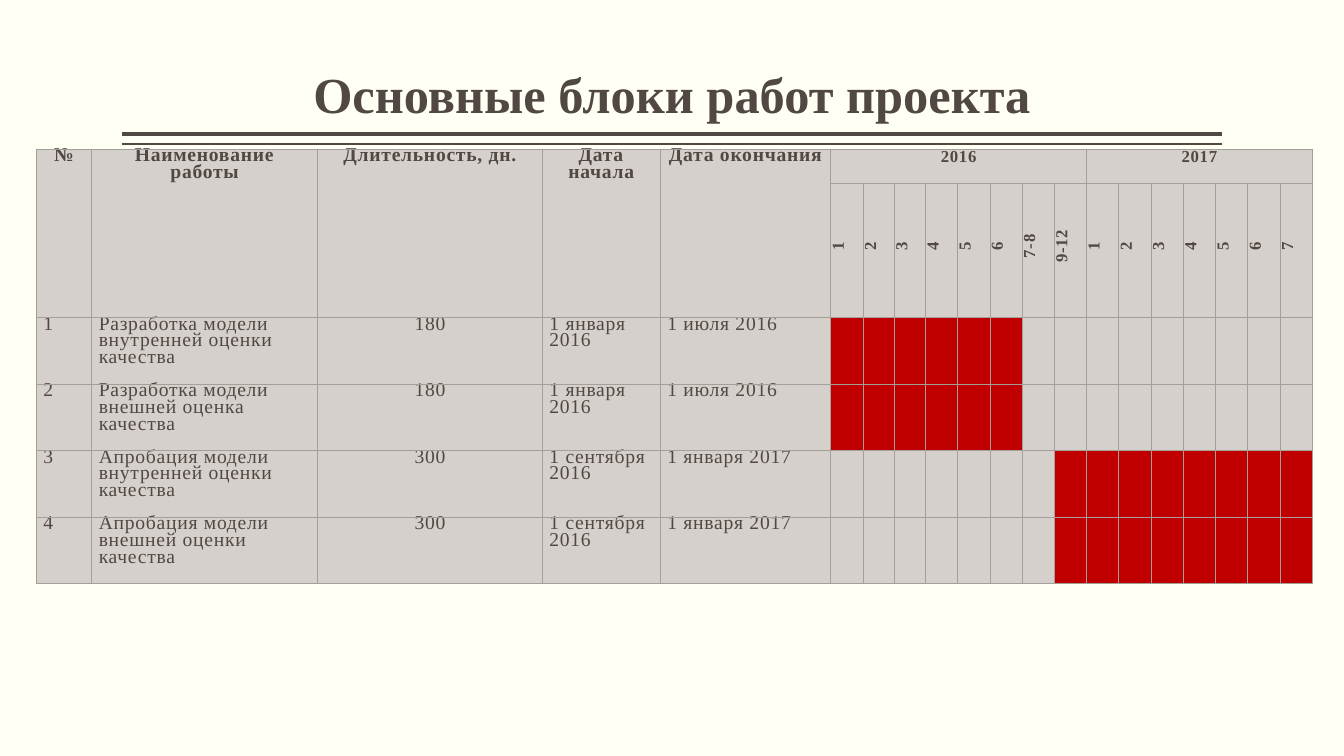
from lxml.etree import SubElement
from pptx import Presentation
from pptx.dml.color import RGBColor
from pptx.enum.shapes import MSO_CONNECTOR
from pptx.enum.text import MSO_ANCHOR, PP_ALIGN
from pptx.oxml import parse_xml
from pptx.oxml.ns import nsdecls, qn
from pptx.util import Inches, Pt

FONT = "Times New Roman"
INK, PAPER, CELL, BORDER, BAR = "514843", "FFFFF3", "D5D0CB", "A59F9A", "C00000"
FIRST_MONTH = 5
COLUMNS = [0.55, 2.24, 2.23, 1.17, 1.69, 0.32, 0.31, 0.31] + [0.32] * 12
ROWS = [0.34, 1.33] + [0.66] * 4
HEADINGS = ["№", "Наименование работы", "Длительность, дн.", "Дата начала", "Дата окончания"]
YEARS = [
    ("2016", ["1", "2", "3", "4", "5", "6", "7-8", "9-12"]),
    ("2017", ["1", "2", "3", "4", "5", "6", "7"]),
]
TASKS = [
    ("Разработка модели внутренней оценки качества", "180", "1 января 2016", "1 июля 2016", range(0, 6)),
    ("Разработка модели внешней оценка качества", "180", "1 января 2016", "1 июля 2016", range(0, 6)),
    ("Апробация модели внутренней оценки качества", "300", "1 сентября 2016", "1 января 2017", range(7, 15)),
    ("Апробация модели внешней оценки качества", "300", "1 сентября 2016", "1 января 2017", range(7, 15)),
]


def color(value):
    return RGBColor.from_string(value)


def add_run(p, text, size, bold):
    r = p.add_run()
    r.text = text
    r.font.name = FONT
    r.font.size = Pt(size)
    r.font.bold = bold
    r.font.color.rgb = color(INK)
    return r


def add_title(slide, text, left, top, width, height):
    sp = slide.shapes.add_textbox(Inches(left), Inches(top), Inches(width), Inches(height))
    tf = sp.text_frame
    tf.word_wrap = True
    tf.vertical_anchor = MSO_ANCHOR.BOTTOM
    tf.margin_left = tf.margin_right = 0
    p = tf.paragraphs[0]
    p.alignment = PP_ALIGN.CENTER
    p.line_spacing = 0.9
    add_run(p, text, 36, True)
    for offset, weight in [(0.05, 3), (0.15, 1)]:
        y = Inches(top + height + offset)
        rule = slide.shapes.add_connector(
            MSO_CONNECTOR.STRAIGHT, Inches(left), y, Inches(left + width), y)
        rule.line.color.rgb = color(INK)
        rule.line.width = Pt(weight)
        SubElement(rule._element.spPr, qn("a:effectLst"))


def style_cell(cell):
    cell.margin_left = cell.margin_right = Inches(0.07)
    cell.margin_top = cell.margin_bottom = 0
    cell.fill.solid()
    cell.fill.fore_color.rgb = color(CELL)
    tcPr = cell._tc.get_or_add_tcPr()
    for i, side in enumerate(["lnL", "lnR", "lnT", "lnB"]):
        tcPr.insert(i, parse_xml(
            f'<a:{side} {nsdecls("a")} w="{Pt(0.5)}"><a:solidFill>'
            f'<a:srgbClr val="{BORDER}"/></a:solidFill></a:{side}>'))


def write_cell(cell, text, size=14, bold=False, align=PP_ALIGN.LEFT):
    p = cell.text_frame.paragraphs[0]
    p.alignment = align
    p.line_spacing = Pt(12)
    r = add_run(p, text, size, bold)
    r.font._element.set("spc", "50")
    return p


def write_header(table):
    for col, text in enumerate(HEADINGS):
        table.cell(0, col).merge(table.cell(1, col))
        write_cell(table.cell(0, col), text, 14, True, PP_ALIGN.CENTER)
    col = FIRST_MONTH
    for year, months in YEARS:
        table.cell(0, col).merge(table.cell(0, col + len(months) - 1))
        write_cell(table.cell(0, col), year, 12, True, PP_ALIGN.CENTER)
        for month in months:
            cell = table.cell(1, col)
            cell._tc.get_or_add_tcPr().set("vert", "vert270")
            p = write_cell(cell, month, 12, True, PP_ALIGN.CENTER)
            p._p.get_or_add_pPr().set("marL", str(Inches(0.08)))
            col += 1


def write_tasks(table):
    for number, (*texts, months) in enumerate(TASKS, 1):
        row = number + 1
        for col, text in enumerate([str(number), *texts]):
            align = PP_ALIGN.CENTER if col == 2 else PP_ALIGN.LEFT
            write_cell(table.cell(row, col), text, align=align)
        for month in months:
            table.cell(row, FIRST_MONTH + month).fill.fore_color.rgb = color(BAR)


def add_schedule(slide, left, top, width, height):
    table = slide.shapes.add_table(
        len(ROWS), len(COLUMNS), Inches(left), Inches(top), Inches(width), Inches(height)).table
    table.first_row = table.horz_banding = False
    for column, size in zip(table.columns, COLUMNS):
        column.width = Inches(size)
    for row, size in zip(table.rows, ROWS):
        row.height = Inches(size)
    for cell in table.iter_cells():
        style_cell(cell)
    write_header(table)
    write_tasks(table)


def main():
    prs = Presentation()
    prs.slide_width, prs.slide_height = Inches(13.33), Inches(7.5)
    slide = prs.slides.add_slide(prs.slide_layouts[6])
    slide.background.fill.solid()
    slide.background.fill.fore_color.rgb = color(PAPER)
    add_title(slide, "Основные блоки работ проекта", 1.21, 0.08, 10.91, 1.2)
    add_schedule(slide, 0.36, 1.48, sum(COLUMNS), sum(ROWS))
    prs.save("out.pptx")


if __name__ == "__main__":
    main()
